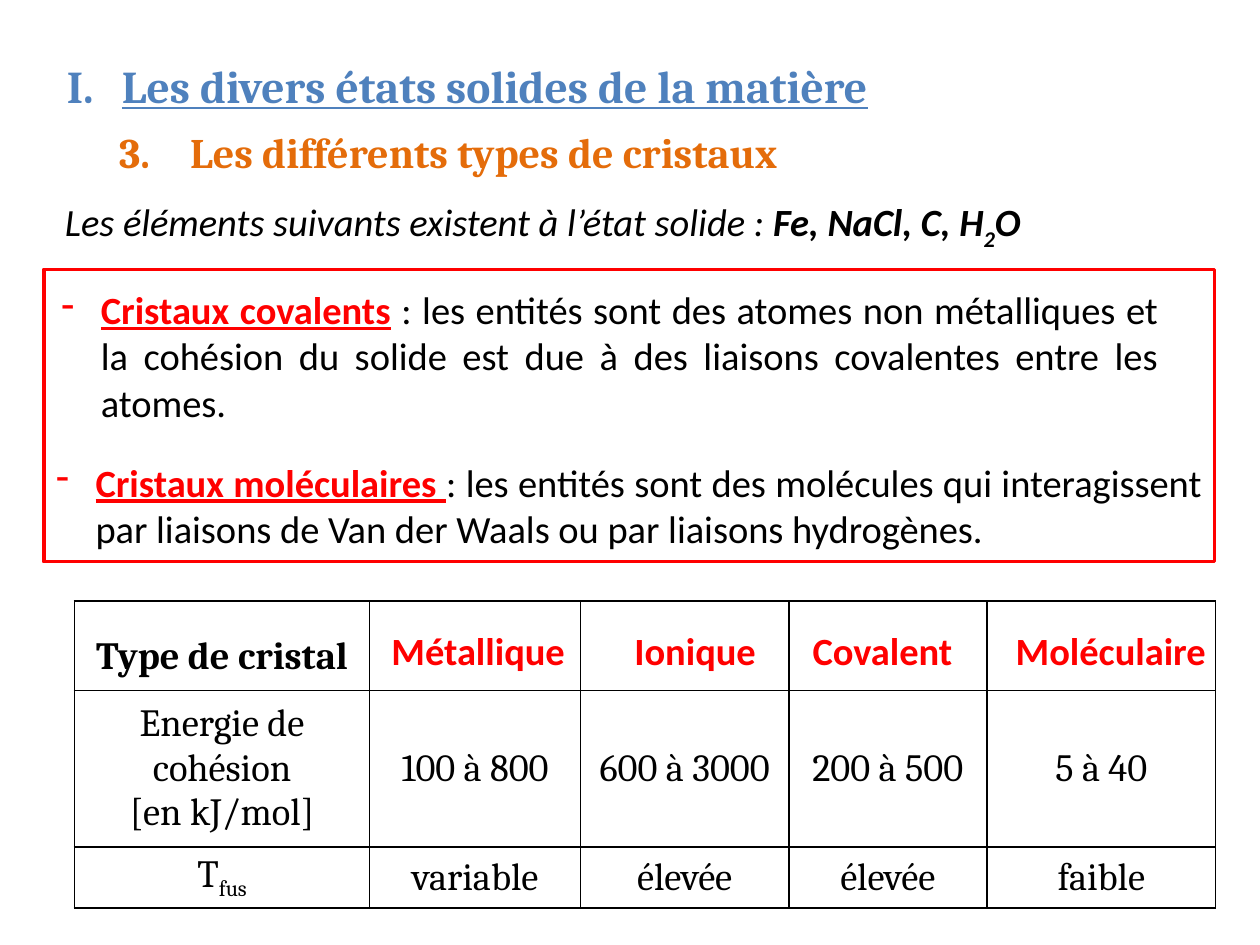
from lxml.etree import SubElement
from pptx import Presentation
from pptx.dml.color import RGBColor
from pptx.enum.shapes import MSO_SHAPE
from pptx.enum.text import MSO_ANCHOR, MSO_AUTO_SIZE, PP_ALIGN
from pptx.oxml.ns import qn
from pptx.util import Pt

BLACK = RGBColor(0, 0, 0)
RED = RGBColor(0xFF, 0, 0)
BLUE = RGBColor(0x4F, 0x81, 0xBD)
ORANGE = RGBColor(0xE4, 0x6C, 0x0A)

TITLE = "Les divers états solides de la matière"
SUBTITLE = "3.\tLes différents types de cristaux"
INTRO = [("Les éléments suivants existent à l’état solide\u00a0: ", False, 0),
         ("Fe, NaCl, C, H", True, 0), ("2", True, -30000), ("O\u00a0", True, 0)]
DEFINITIONS = [
    ((28, 160, 641, 87), "Cristaux covalents",
     " : les entités sont des atomes non métalliques et la cohésion du solide "
     "est due à des liaisons covalentes entre les atomes."),
    ((25, 258.5, 669, 60.5), "Cristaux moléculaires ",
     ": les entités sont des molécules qui interagissent par liaisons de "
     "Van der Waals ou par liaisons hydrogènes."),
]
ROWS = [
    ["Type de cristal", "", "", "", ""],
    ["Energie de cohésion\n[en kJ/mol]", "100 à 800", "600 à 3000", "200 à 500", "5 à 40"],
    ["T", "variable", "élevée", "élevée", "faible"],
]
COLUMN_WIDTHS = [168.8, 120.5, 119, 113.2, 130.8]
ROW_HEIGHTS = [51, 89.5, 35]
TYPES = [("Métallique", 208), ("Ionique", 332), ("Covalent", 439), ("Moléculaire", 569.5)]


def style(font, color, size=22, name="Calibri", bold=False):
    font.name, font.size, font.bold = name, Pt(size), bold
    font.color.rgb = color


def place(shape, left, top, width, height):
    shape.left, shape.top, shape.width, shape.height = map(Pt, (left, top, width, height))


def add_text(page, box, anchor=MSO_ANCHOR.TOP):
    frame = page.shapes.add_textbox(*map(Pt, box)).text_frame
    frame.word_wrap = True
    frame.auto_size = MSO_AUTO_SIZE.SHAPE_TO_FIT_TEXT
    frame.vertical_anchor = anchor
    return frame.paragraphs[0]


def add_span(para, text, baseline=0):
    span = para.add_run()
    span.text = text
    if baseline:
        span.font._element.set("baseline", str(baseline))
    return span


def indent(para, margin, hanging, bullet=None, **attributes):
    properties = para._p.get_or_add_pPr()
    properties.set("marL", str(Pt(margin)))
    properties.set("indent", str(-Pt(hanging)))
    if bullet:
        SubElement(properties, qn(bullet), attributes)


def add_borders(cell):
    properties = cell._tc.get_or_add_tcPr()
    for position, side in enumerate(("a:lnL", "a:lnR", "a:lnT", "a:lnB")):
        line = SubElement(properties, qn(side), w=str(Pt(1)))
        fill = SubElement(line, qn("a:solidFill"))
        SubElement(fill, qn("a:srgbClr"), val=str(BLACK))
        properties.insert(position, line)


def add_headings(page):
    title = page.shapes.title
    place(title, 31, 29.5, 652, 39.5)
    title.text_frame.text = TITLE
    title.text_frame.vertical_anchor = MSO_ANCHOR.TOP
    title.text_frame.auto_size = MSO_AUTO_SIZE.NONE
    para = title.text_frame.paragraphs[0]
    para.alignment = PP_ALIGN.LEFT
    style(para.font, BLUE, 26, "Cambria", True)
    para.runs[0].font.underline = True
    indent(para, 31.5, 31.5, "a:buAutoNum", type="romanUcPeriod")

    para = add_text(page, (25, 69, 652, 36))
    para.text = SUBTITLE
    style(para.font, ORANGE, 24, "Cambria", True)
    indent(para, 76.5, 40.5)

    para = add_text(page, (30, 111.5, 660, 34), MSO_ANCHOR.MIDDLE)
    style(para.font, BLACK)
    para.font.italic = True
    for text, bold, baseline in INTRO:
        add_span(para, text, baseline).font.bold = bold


def add_crystal_table(page):
    frame = page.shapes.add_table(len(ROWS), len(COLUMN_WIDTHS), Pt(42.5), Pt(343.5),
                                  Pt(sum(COLUMN_WIDTHS)), Pt(sum(ROW_HEIGHTS)))
    table = frame.table
    table.first_row = table.horz_banding = False
    for column, width in zip(table.columns, COLUMN_WIDTHS):
        column.width = Pt(width)
    for row, height, texts in zip(table.rows, ROW_HEIGHTS, ROWS):
        row.height = Pt(height)
        for cell, text in zip(row.cells, texts):
            cell.text = text
            cell.fill.background()
            cell.vertical_anchor = MSO_ANCHOR.MIDDLE
            cell.margin_left = cell.margin_right = Pt(5)
            cell.margin_top = cell.margin_bottom = 0
            for para in cell.text_frame.paragraphs:
                para.alignment = PP_ALIGN.CENTER
                style(para.font, BLACK, name="Cambria", bold=texts is ROWS[0])
            add_borders(cell)
    table.cell(0, 0).text_frame.paragraphs[0].line_spacing = 1.5
    add_span(table.cell(2, 0).text_frame.paragraphs[0], "fus", -25000)

    for name, left in TYPES:
        para = add_text(page, (left, 355, 130.5, 34))
        para.text = name
        para.alignment = PP_ALIGN.CENTER
        style(para.font, RED, bold=True)


def add_definitions(page):
    for box, term, meaning in DEFINITIONS:
        para = add_text(page, box)
        para.alignment = PP_ALIGN.JUSTIFY
        style(para.font, BLACK)
        indent(para, 22.5, 22.5, "a:buChar", char="-")
        span = add_span(para, term)
        span.font.bold = span.font.underline = True
        span.font.color.rgb = RED
        add_span(para, meaning)

    outline = page.shapes.add_shape(MSO_SHAPE.RECTANGLE, Pt(25), Pt(154), Pt(669), Pt(167))
    outline.shadow.inherit = False
    outline.fill.background()
    outline.line.color.rgb = RED
    outline.line.width = Pt(2)


def main():
    deck = Presentation()
    deck.slide_width, deck.slide_height = Pt(720), Pt(540)
    page = deck.slides.add_slide(deck.slide_layouts[5])
    add_headings(page)
    add_crystal_table(page)
    add_definitions(page)
    deck.save("out.pptx")


if __name__ == "__main__":
    main()
